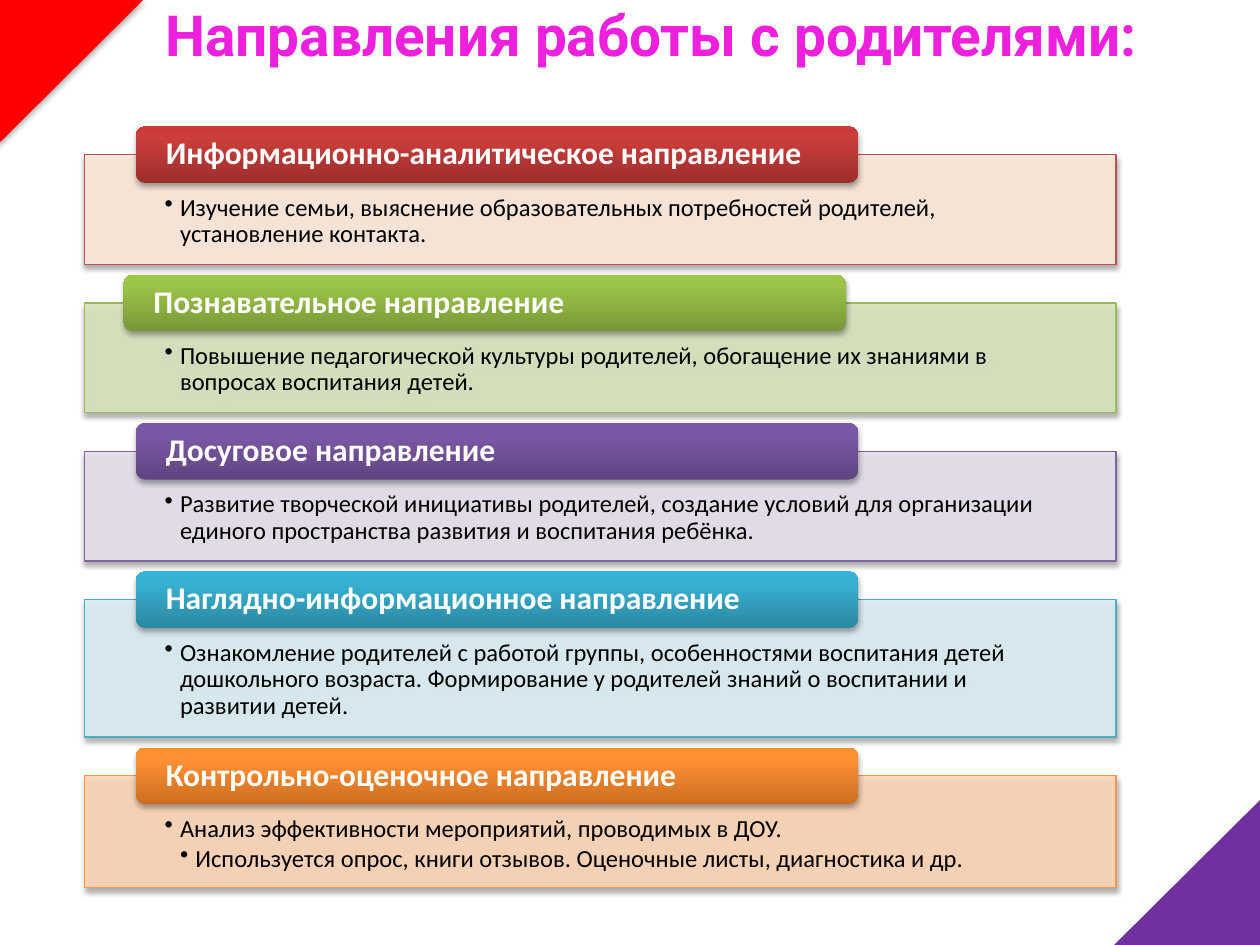
"""Builds a slide listing five directions of work with parents."""
from copy import deepcopy
from dataclasses import dataclass

from lxml.etree import SubElement
from pptx import Presentation
from pptx.dml.color import RGBColor
from pptx.enum.shapes import MSO_SHAPE as Preset
from pptx.enum.text import MSO_ANCHOR as Anchor, MSO_AUTO_SIZE as AutoSize, PP_ALIGN as Align
from pptx.oxml.ns import qn
from pptx.util import Cm, Pt

MAGENTA = RGBColor(0xEC, 0x20, 0xDD)
RED = RGBColor(0xFF, 0x00, 0x00)
PURPLE = RGBColor(0x70, 0x30, 0xA0)
BLACK = RGBColor(0x00, 0x00, 0x00)
WHITE = RGBColor(0xFF, 0xFF, 0xFF)

PANEL_LEFT, PANEL_WIDTH = Cm(1.7), Cm(20.8)
FIRST_PANEL_TOP, PANEL_GAP = Cm(3.12), Cm(0.78)
HEADING_WIDTH, HEADING_HEIGHT, HEADING_RISE = Cm(14.56), Cm(1.14), Cm(0.57)
BULLET_INDENT = Cm(0.31)
CORNER_WIDTH, CORNER_HEIGHT = Cm(2.94), Cm(2.92)


@dataclass(frozen=True)
class Direction:
    heading: str
    points: tuple[str, ...]
    tint: RGBColor
    border: RGBColor
    gradient: tuple[RGBColor, RGBColor, RGBColor]
    height: float = 2.21
    heading_left: float = 2.74


def shades(*codes: str) -> tuple:
    return tuple(RGBColor.from_string(code) for code in codes)


DIRECTIONS = (
    Direction(
        "Информационно-аналитическое направление",
        ("Изучение семьи, выяснение образовательных потребностей родителей, установление контакта.",),
        RGBColor(0xFD, 0xEA, 0xDA), RGBColor(0xC0, 0x50, 0x4D),
        shades("9C2F2D", "CB3E3A", "CE3B37"),
    ),
    Direction(
        "Познавательное направление",
        ("Повышение педагогической культуры родителей, обогащение их знаниями в "
         "вопросах воспитания детей.",),
        RGBColor(0xD7, 0xE4, 0xBD), RGBColor(0x9B, 0xBB, 0x59),
        shades("779737", "9BC348", "9DC746"), heading_left=2.49,
    ),
    Direction(
        "Досуговое направление",
        ("Развитие творческой инициативы родителей, создание условий для организации "
         "единого пространства развития и воспитания ребёнка.",),
        RGBColor(0xE6, 0xE0, 0xEC), RGBColor(0x80, 0x64, 0xA2),
        shades("5F4480", "7B58A6", "7C57A8"),
    ),
    Direction(
        "Наглядно-информационное направление",
        ("Ознакомление родителей с работой группы, особенностями воспитания детей "
         "дошкольного возраста. Формирование у родителей знаний о воспитании и развитии детей.",),
        RGBColor(0xDB, 0xEE, 0xF4), RGBColor(0x4B, 0xAC, 0xC6),
        shades("2A88A2", "37B1D2", "34B4D6"), height=2.77,
    ),
    Direction(
        "Контрольно-оценочное направление",
        ("Анализ эффективности мероприятий, проводимых в ДОУ.",
         "Используется опрос, книги отзывов. Оценочные листы, диагностика и др."),
        RGBColor(0xFC, 0xD5, 0xB5), RGBColor(0xF7, 0x96, 0x46),
        shades("CC6E20", "FF9034", "FF9136"), height=2.26,
    ),
)


def write_text(shape, *lines: str, size: float, color: RGBColor, font: str = "Calibri",
               bold: bool = False, align=Align.LEFT, anchor=Anchor.MIDDLE,
               insets: tuple = (0, 0, 0, 0), spacing: float = 1.0,
               after: float = 0, bullets: bool = False) -> None:
    frame = shape.text_frame
    frame.word_wrap = True
    frame.auto_size = AutoSize.NONE
    frame.vertical_anchor = anchor
    frame.margin_left, frame.margin_top, frame.margin_right, frame.margin_bottom = map(Cm, insets)
    for level, line in enumerate(lines, start=1):
        paragraph = frame.paragraphs[0] if level == 1 else frame.add_paragraph()
        paragraph.alignment = align
        paragraph.line_spacing = spacing
        paragraph.space_after = Pt(after)
        if bullets:
            paragraph.level = level
            properties = paragraph._p.get_or_add_pPr()
            properties.set("marL", str(BULLET_INDENT * level))
            properties.set("indent", str(-BULLET_INDENT))
            SubElement(properties, qn("a:buChar"), char="•")
        run = paragraph.add_run()
        run.text = line
        run.font.name, run.font.size, run.font.bold = font, Pt(size), bold
        run.font.color.rgb = color


def add_shadow(shape, opacity: int, blur: float, distance: float) -> None:
    shape.shadow.inherit = False
    effects = shape._element.spPr.find(qn("a:effectLst"))
    shadow = SubElement(effects, qn("a:outerShdw"), blurRad=str(Pt(blur)),
                        dist=str(Pt(distance)), dir="5400000", rotWithShape="0")
    shade = SubElement(shadow, qn("a:srgbClr"), val=str(BLACK))
    SubElement(shade, qn("a:alpha"), val=str(opacity * 1000))


def add_corner(slide, left: int, top: int, color: RGBColor, rotation: int = 0) -> None:
    corner = slide.shapes.add_shape(Preset.RIGHT_TRIANGLE, left, top, CORNER_WIDTH, CORNER_HEIGHT)
    corner._element.spPr.find(qn("a:xfrm")).set("flipV", "1")
    corner.rotation = rotation
    corner.fill.solid()
    corner.fill.fore_color.rgb = color
    corner.line.fill.background()
    add_shadow(corner, 32, 3.5, 2.2)


def add_panel(slide, direction: Direction, top: int) -> None:
    panel = slide.shapes.add_shape(Preset.RECTANGLE, PANEL_LEFT, top, PANEL_WIDTH,
                                   Cm(direction.height))
    panel.fill.solid()
    panel.fill.fore_color.rgb = direction.tint
    tint = panel._element.spPr.find(f"{qn('a:solidFill')}/{qn('a:srgbClr')}")
    SubElement(tint, qn("a:alpha"), val="90000")
    panel.line.color.rgb = direction.border
    panel.line.width = Pt(0.75)
    add_shadow(panel, 35, 3.1, 1.8)
    write_text(panel, *direction.points, size=14, color=BLACK, anchor=Anchor.TOP,
               insets=(1.62, 0.81, 1.62, 0.28), spacing=0.9, after=2.1, bullets=True)


def add_heading(slide, direction: Direction, top: int) -> None:
    heading = slide.shapes.add_shape(Preset.ROUNDED_RECTANGLE, Cm(direction.heading_left), top,
                                     HEADING_WIDTH, HEADING_HEIGHT)
    heading.fill.gradient()
    heading.fill.gradient_angle = 90
    stop_list = heading._element.spPr.find(f"{qn('a:gradFill')}/{qn('a:gsLst')}")
    stop_list.append(deepcopy(stop_list[-1]))
    for stop, position, color in zip(heading.fill.gradient_stops, (0, 0.8, 1), direction.gradient):
        stop.position = position
        stop.color.rgb = color
    heading.line.fill.background()
    add_shadow(heading, 35, 3.1, 1.8)
    write_text(heading, direction.heading, size=18, color=WHITE, bold=True,
               insets=(0.55, 0, 0.55, 0), spacing=0.9)


def main() -> None:
    deck = Presentation()
    deck.slide_width, deck.slide_height = Cm(25.4), Cm(19.05)
    slide = deck.slides.add_slide(deck.slide_layouts[5])

    title = slide.shapes.title
    title.left, title.top, title.width, title.height = Cm(1.7), Cm(0), Cm(22.86), Cm(1.37)
    write_text(title, "Направления работы с родителями:", size=32.4, color=MAGENTA,
               font="Roboto", bold=True, align=Align.CENTER)

    add_corner(slide, Cm(-0.05), Cm(0), RED)
    top = FIRST_PANEL_TOP
    for direction in DIRECTIONS:
        add_panel(slide, direction, top)
        add_heading(slide, direction, top - HEADING_RISE)
        top += Cm(direction.height) + PANEL_GAP
    add_corner(slide, deck.slide_width - CORNER_WIDTH, deck.slide_height - CORNER_HEIGHT,
               PURPLE, rotation=180)
    deck.save("out.pptx")


if __name__ == "__main__":
    main()
